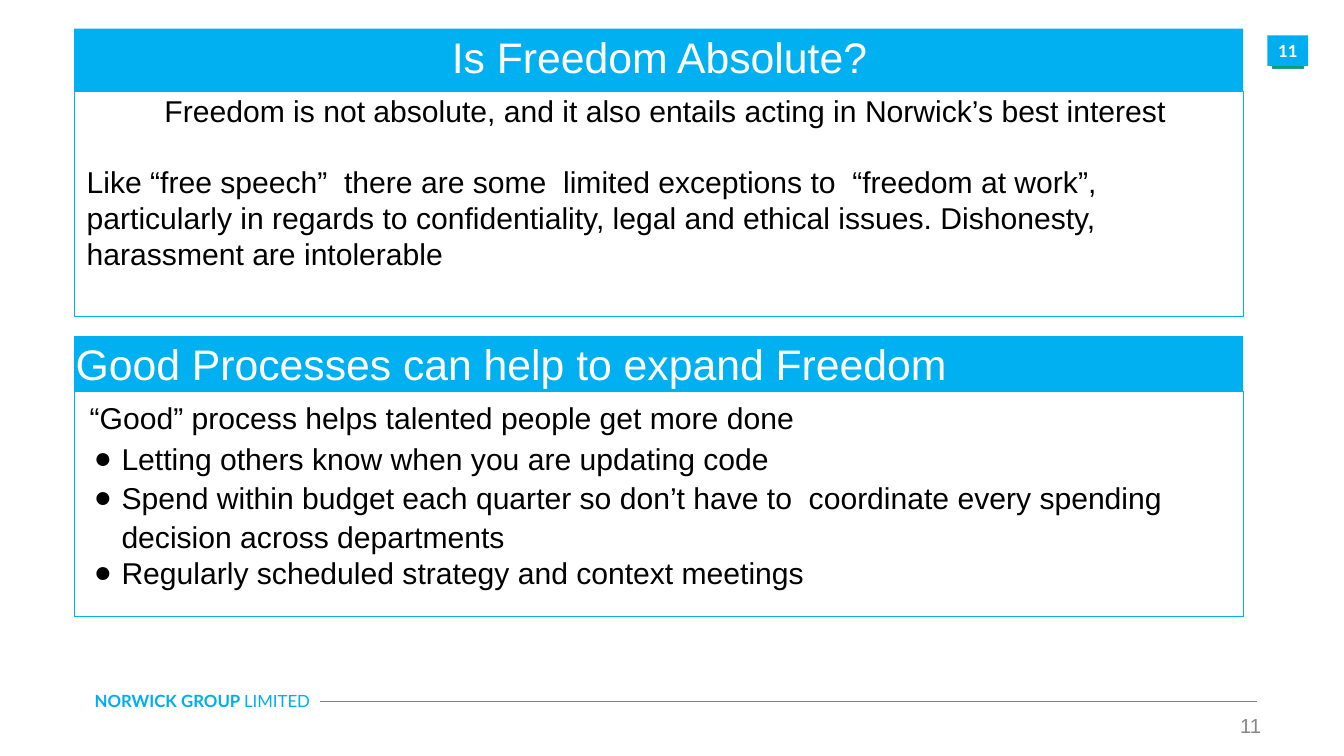
from dataclasses import dataclass

from lxml import etree
from pptx import Presentation
from pptx import util as u
from pptx.dml import color
from pptx.enum import shapes, text
from pptx.oxml import ns


@dataclass(frozen=True)
class Theme:
    bar: str = "00B0F0"
    brand: str = "00ADEF"
    badge_edge: str = "1EA185"
    badge_top: str = "4BAC93"
    badge_bottom: str = "0D997B"
    rule: str = "7F7F7F"
    muted: str = "888888"
    ink: str = "000000"
    white: str = "FFFFFF"
    font: str = "Arial"
    brand_font: str = "Lato"
    heading: int = 61
    body: int = 43
    page: int = 29
    small: int = 24


theme = Theme()
rgb = color.RGBColor.from_string


def set_frame(shape, box, insets, fill=None, line=None):
    """Place a shape, paint it and prepare its text frame."""
    shape.left, shape.top, shape.width, shape.height = map(u.Inches, box)
    if fill:
        shape.fill.solid()
        shape.fill.fore_color.rgb = rgb(fill)
    else:
        shape.fill.background()
    if line:
        shape.line.color.rgb = rgb(line)
        shape.line.width = u.Pt(0.75)
    else:
        shape.line.fill.background()
    shape.shadow.inherit = False
    frame = shape.text_frame
    frame.word_wrap = True
    frame.auto_size = text.MSO_AUTO_SIZE.NONE
    frame.vertical_anchor = text.MSO_ANCHOR.TOP
    (frame.margin_left, frame.margin_top,
     frame.margin_right, frame.margin_bottom) = map(u.Inches, insets)
    return frame


def write(paragraph, content, size, ink, font=theme.font, bold=False,
          margin=0, hanging=0, before=0, spacing=1.0, bullet=None):
    """Format a paragraph and add one run to it."""
    paragraph.alignment = paragraph.alignment or text.PP_ALIGN.LEFT
    paragraph.space_before = u.Pt(before)
    paragraph.line_spacing = spacing
    properties = paragraph._p.get_or_add_pPr()
    properties.set("marL", str(u.Inches(margin)))
    properties.set("indent", str(u.Inches(-hanging)))
    for old in properties.xpath("a:buClr | a:buNone | a:buChar"):
        properties.remove(old)
    if bullet:
        bullet_color = etree.SubElement(properties, ns.qn("a:buClr"))
        etree.SubElement(bullet_color, ns.qn("a:srgbClr"), val=ink)
        etree.SubElement(properties, ns.qn("a:buChar"), char=bullet)
    else:
        etree.SubElement(properties, ns.qn("a:buNone"))
    run = paragraph.add_run()
    run.text = content
    run.font.name, run.font.size, run.font.bold = font, u.Pt(size), bold
    run.font.color.rgb = rgb(ink)


presentation = Presentation()
presentation.slide_width = u.Inches(26.66)
presentation.slide_height = u.Inches(15)
slide = presentation.slides.add_slide(presentation.slide_layouts[1])
title, body = slide.placeholders
rectangle = shapes.MSO_SHAPE.RECTANGLE

# Page badge with a green edge behind it
edge = slide.shapes.add_shape(rectangle, 0, 0, 0, 0)
set_frame(edge, (25.24, 0.73, 0.62, 0.62), (0, 0, 0, 0), line=theme.badge_edge)
edge.fill.gradient()
edge.fill.gradient_angle = 270
for stop, shade in zip(edge.fill.gradient_stops, (theme.badge_top, theme.badge_bottom)):
    stop.color.rgb = rgb(shade)

badge = slide.shapes.add_shape(rectangle, 0, 0, 0, 0)
frame = set_frame(badge, (25.14, 0.7, 0.81, 0.61), (0.2, 0.1, 0.2, 0.1), theme.brand)
frame.vertical_anchor = text.MSO_ANCHOR.MIDDLE
frame.paragraphs[0].alignment = text.PP_ALIGN.CENTER
write(frame.paragraphs[0], "11", theme.small, theme.white, theme.brand_font, True)

# Footer name, rule and page number
footer = slide.shapes.add_textbox(0, 0, 0, 0)
frame = set_frame(footer, (1.78, 13.65, 4.93, 0.5), (0.1, 0.05, 0.1, 0.05))
for words, bold in (("NORWICK GROUP ", True), ("LIMITED", False)):
    write(frame.paragraphs[0], words, theme.small, theme.brand, theme.brand_font, bold)

rule = slide.shapes.add_connector(
    shapes.MSO_CONNECTOR.STRAIGHT,
    u.Inches(6.34), u.Inches(13.92), u.Inches(24.94), u.Inches(13.92))
rule.line.color.rgb = rgb(theme.rule)
rule.line.width = u.Pt(1)
etree.SubElement(rule._element.spPr, ns.qn("a:effectLst"))

page = slide.shapes.add_textbox(0, 0, 0, 0)
frame = set_frame(page, (24.53, 14.14, 0.6, 0.39), (0, 0, 0, 0))
write(frame.paragraphs[0], "11", theme.page, theme.muted, margin=0.07, spacing=1.03)

# Two panels: a heading bar directly above an outlined box
left, width, box_height = 1.47, 23.19, 4.46
blank_line = 49
panels = [
    (slide.shapes.add_shape(rectangle, 0, 0, 0, 0),
     slide.shapes.add_shape(rectangle, 0, 0, 0, 0),
     0.57, 1.24, 0.03, "Is Freedom Absolute?",
     [("Freedom is not absolute, and it also entails acting in Norwick’s best interest",
       dict(margin=0.25)),
      ("Like “free speech”  there are some  limited exceptions to  “freedom at work”, "
       "particularly in regards to confidentiality, legal and ethical issues. "
       "Dishonesty, harassment are intolerable",
       dict(margin=0.25, before=blank_line))]),
    (title, body, 6.67, 1.1, 0.15, "Good Processes can help to expand Freedom",
     [("“Good” process helps talented people get more done", dict(margin=0.31)),
      ("Letting others know when you are updating code",
       dict(margin=0.94, hanging=0.55, before=7, bullet="●")),
      ("Spend within budget each quarter so don’t have to  coordinate every "
       "spending decision across departments",
       dict(margin=0.94, hanging=0.55, spacing=1.08, bullet="●")),
      ("Regularly scheduled strategy and context meetings",
       dict(margin=0.94, hanging=0.55, bullet="●"))]),
]
for bar, box, top, bar_height, inset, heading, lines in panels:
    frame = set_frame(bar, (left, top, width, bar_height), (0, 0.04, 0, 0), theme.bar)
    write(frame.paragraphs[0], heading, theme.heading, theme.white, margin=0.03)
    frame = set_frame(box, (left, top + bar_height, width, box_height),
                      (0, inset, 0, 0), line=theme.bar)
    for index, (content, style) in enumerate(lines):
        paragraph = frame.add_paragraph() if index else frame.paragraphs[0]
        write(paragraph, content, theme.body, theme.ink, **style)

presentation.save("out.pptx")
